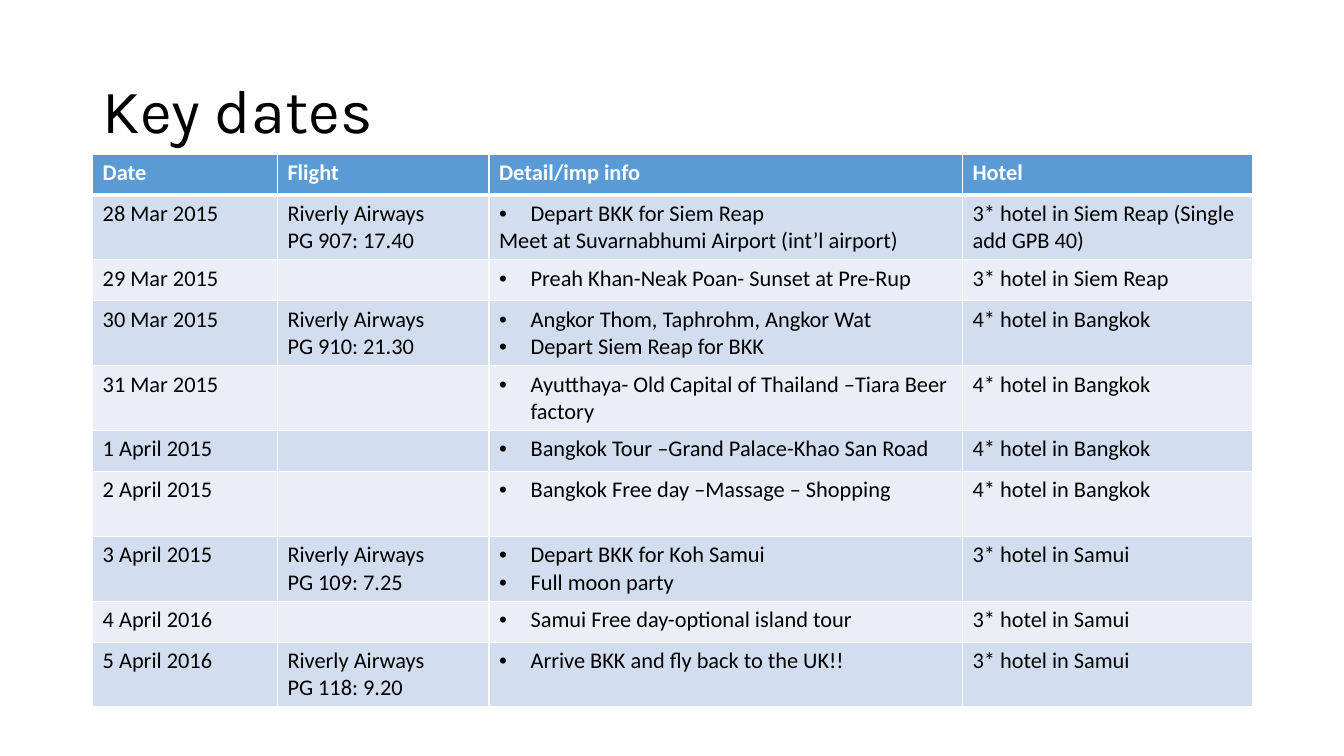
from lxml import etree
from pptx import Presentation
from pptx.dml.color import RGBColor
from pptx.enum import text
from pptx.oxml import ns
from pptx.util import Pt

TITLE = "Key dates"
HEADERS = ["Date", "Flight", "Detail/imp info", "Hotel"]
AIRLINE = "Riverly Airways"
BULLET = "• "
TRIP_DAYS = [
    ("28 Mar 2015", [AIRLINE, "PG 907: 17.40"],
     ["• Depart BKK for Siem Reap", "Meet at Suvarnabhumi Airport (int’l airport)"],
     "3* hotel in Siem Reap (Single add GPB 40)"),
    ("29 Mar 2015", [], ["• Preah Khan-Neak Poan- Sunset at Pre-Rup"], "3* hotel in Siem Reap"),
    ("30 Mar 2015", [AIRLINE, "PG 910: 21.30"],
     ["• Angkor Thom, Taphrohm, Angkor Wat", "• Depart Siem Reap for BKK"],
     "4* hotel in Bangkok"),
    ("31 Mar 2015", [], ["• Ayutthaya- Old Capital of Thailand –Tiara Beer factory"],
     "4* hotel in Bangkok"),
    ("1 April 2015", [], ["• Bangkok Tour –Grand Palace-Khao San Road"], "4* hotel in Bangkok"),
    ("2 April 2015", [], ["• Bangkok Free day –Massage – Shopping"], "4* hotel in Bangkok"),
    ("3 April 2015", [AIRLINE, "PG 109: 7.25"],
     ["• Depart BKK for Koh Samui", "• Full moon party"], "3* hotel in Samui"),
    ("4 April 2016", [], ["• Samui Free day-optional island tour"], "3* hotel in Samui"),
    ("5 April 2016", [AIRLINE, "PG 118: 9.20"],
     ["• Arrive BKK and fly back to the UK!!"], "3* hotel in Samui"),
]
TALL_ROWS = {1, 3, 4, 6, 7, 9}
SHORT_HEIGHT, TALL_HEIGHT = 29.2, 46.4
COLUMN_WIDTHS = [132, 151.2, 338.2, 207]
LEFT, TABLE_TOP, WIDTH = 66.2, 110, 828.4
HEADER_FILL, BAND_FILLS = "5B9BD5", ["EAEFF7", "D2DEEF"]
WHITE, BLACK = "FFFFFF", "000000"


def color(value):
    return RGBColor.from_string(value)


def add_run(paragraph, words, font, size, font_color, bold=False):
    run = paragraph.add_run()
    run.text = words
    run.font.name = font
    run.font.size = Pt(size)
    run.font.bold = bold
    run.font.color.rgb = color(font_color)


def add_bullet(paragraph):
    properties = paragraph._p.get_or_add_pPr()
    properties.set("marL", str(Pt(22.5)))
    properties.set("indent", str(Pt(-22.5)))
    etree.SubElement(properties, ns.qn("a:buFont"), typeface="Arial")
    etree.SubElement(properties, ns.qn("a:buChar"), char=BULLET.strip())


def add_borders(cell, row):
    properties = cell._tc.get_or_add_tcPr()
    widths = {"lnL": 1, "lnR": 1, "lnT": 3 if row == 1 else 1, "lnB": 3 if row == 0 else 1}
    for side, width in widths.items():
        line = etree.SubElement(properties, ns.qn("a:" + side), w=str(Pt(width)))
        fill = etree.SubElement(line, ns.qn("a:solidFill"))
        etree.SubElement(fill, ns.qn("a:srgbClr"), val=WHITE)


def fill_cell(cell, row, lines):
    add_borders(cell, row)
    cell.fill.solid()
    cell.fill.fore_color.rgb = color(BAND_FILLS[row % 2] if row else HEADER_FILL)
    frame = cell.text_frame
    for index, line in enumerate(lines):
        paragraph = frame.add_paragraph() if index else frame.paragraphs[0]
        if line.startswith(BULLET):
            add_bullet(paragraph)
        add_run(paragraph, line.removeprefix(BULLET), "Calibri", 16,
                BLACK if row else WHITE, bold=row == 0)


def add_title(slide):
    title = slide.shapes.title
    title.left, title.top, title.width, title.height = Pt(LEFT), Pt(28.8), Pt(WIDTH), Pt(104.4)
    frame = title.text_frame
    frame.auto_size = text.MSO_AUTO_SIZE.NONE
    frame.vertical_anchor = text.MSO_ANCHOR.MIDDLE
    paragraph = frame.paragraphs[0]
    paragraph.alignment = text.PP_ALIGN.LEFT
    paragraph.line_spacing = 0.9
    add_run(paragraph, TITLE, "Karla", 44, BLACK)


def add_schedule(slide):
    rows = [HEADERS, *TRIP_DAYS]
    heights = [TALL_HEIGHT if row in TALL_ROWS else SHORT_HEIGHT for row in range(len(rows))]
    table = slide.shapes.add_table(len(rows), len(HEADERS), Pt(LEFT), Pt(TABLE_TOP),
                                   Pt(WIDTH), Pt(sum(heights))).table
    for column, width in zip(table.columns, COLUMN_WIDTHS):
        column.width = Pt(width)
    for row, (values, height) in enumerate(zip(rows, heights)):
        table.rows[row].height = Pt(height)
        for column, value in enumerate(values):
            lines = [value] if isinstance(value, str) else value
            fill_cell(table.cell(row, column), row, lines)


def main():
    presentation = Presentation()
    presentation.slide_width, presentation.slide_height = Pt(960), Pt(540)
    slide = presentation.slides.add_slide(presentation.slide_layouts[5])
    add_title(slide)
    add_schedule(slide)
    presentation.save("out.pptx")


if __name__ == "__main__":
    main()
